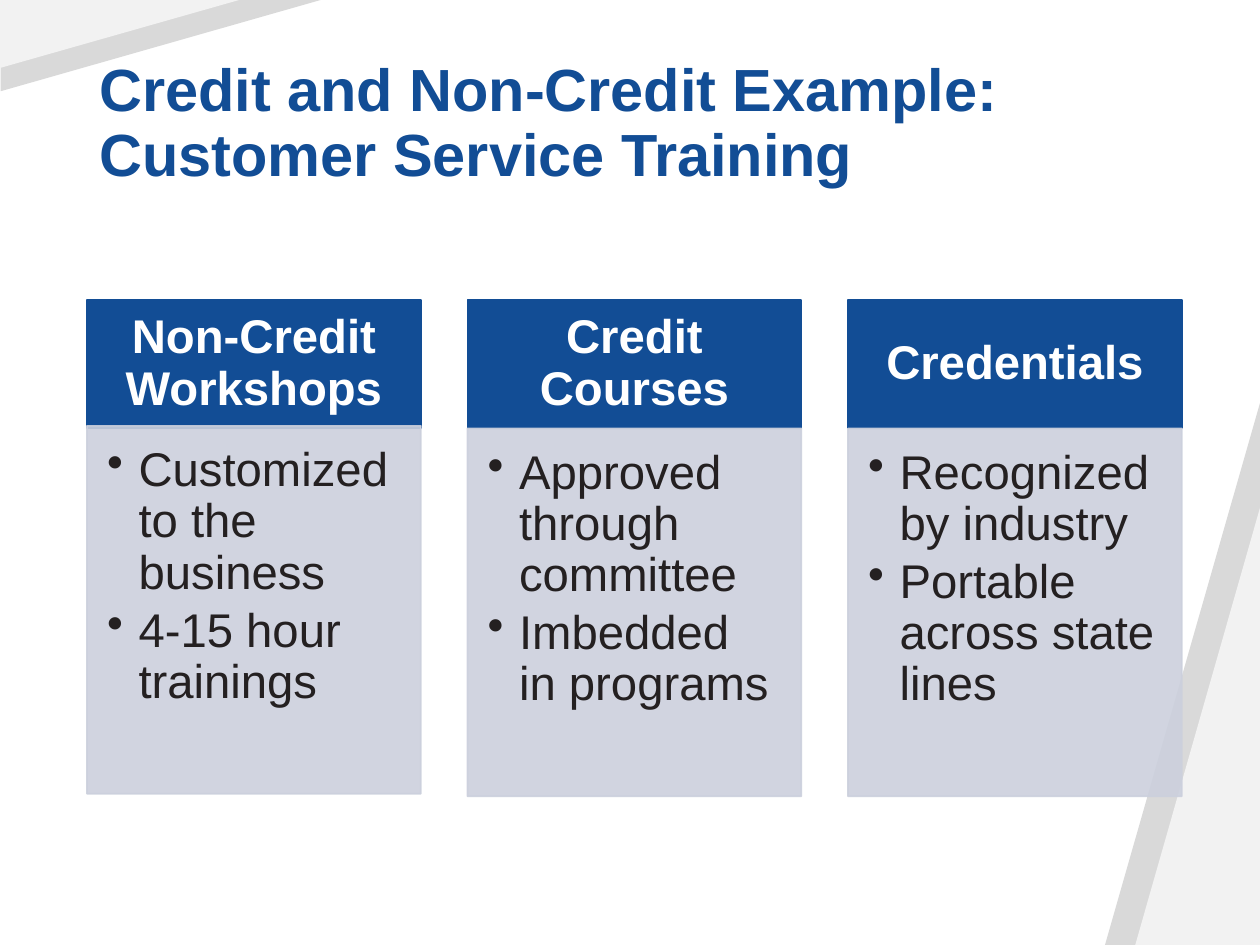
from lxml.etree import SubElement
from pptx import Presentation
from pptx.dml.color import RGBColor
from pptx.enum.shapes import MSO_SHAPE
from pptx.enum.text import MSO_ANCHOR, MSO_AUTO_SIZE, PP_ALIGN
from pptx.oxml.ns import qn
from pptx.util import Inches, Pt

TITLE = "Credit and Non-Credit Example:\vCustomer Service Training"
CARDS = [
    ("Non-Credit Workshops", 3.38, ["Customized to the business", "4-15 hour trainings"]),
    ("Credit Courses", 3.4, ["Approved through committee", "Imbedded in programs"]),
    ("Credentials", 3.4, ["Recognized by industry", "Portable across state lines"]),
]
CORNERS = [
    ((8.77, 3.2, 1.23, 4.3), "D9D9D9", False),
    ((9.01, 4.03, 0.99, 3.47), "F2F2F2", False),
    ((0.92, -0.92, 0.73, 2.56), "D9D9D9", True),
    ((0.68, -0.68, 0.54, 1.9), "F2F2F2", True),
]
LEFT, TOP, WIDTH, GAP = 0.69, 2.38, 2.65, 0.37
BLUE, PALE, WHITE, DARK = "124D95", "CCD0DD", "FFFFFF", "242021"
HEAD = dict(size=Pt(27), bold=True, name="Arial")
BODY = dict(HEAD, bold=False)


def paint(fill, color, alpha=100):
    """Give a fill a solid colour and, below 100, an opacity."""
    fill.solid()
    fill.fore_color.rgb = RGBColor.from_string(color)
    if alpha < 100:
        tone = fill._xPr.find(qn("a:solidFill"))[0]
        SubElement(tone, qn("a:alpha"), val=str(alpha * 1000))


def draw(slide, kind, box, color, alpha=100, line=True):
    """Add a flat preset shape."""
    shape = slide.shapes.add_shape(kind, *map(Inches, box))
    shape.shadow.inherit = False
    paint(shape.fill, color, alpha)
    if line:
        paint(shape.line.fill, color, alpha)
        shape.line.width = Pt(1)
    else:
        shape.line.fill.background()
    return shape


def write(shape, lines, color, style, insets, anchor, align, bullet=False):
    """Fill a shape with formatted paragraphs."""
    frame = shape.text_frame
    frame.word_wrap = True
    frame.auto_size = MSO_AUTO_SIZE.NONE
    frame.vertical_anchor = anchor
    for side, inset in zip(("left", "top", "right", "bottom"), insets):
        setattr(frame, f"margin_{side}", Inches(inset))
    frame.text = "\n".join(lines)
    for para in frame.paragraphs:
        para.alignment = align
        para.line_spacing = 0.9
        para.space_before = Pt(0)
        if bullet:
            para.space_after = Pt(4)
            props = para._p.get_or_add_pPr()
            props.set("marL", str(Inches(0.25)))
            props.set("indent", str(Inches(-0.25)))
            SubElement(props, qn("a:buChar"), char="•")
        for run in para.runs:
            for key, value in style.items():
                setattr(run.font, key, value)
            run.font.color.rgb = RGBColor.from_string(color)


def main():
    """Build and save the slide."""
    deck = Presentation()
    deck.slide_width, deck.slide_height = Inches(10), Inches(7.5)
    slide = deck.slides.add_slide(deck.slide_layouts[5])

    for box, color, turned in CORNERS:
        shape = draw(slide, MSO_SHAPE.ISOSCELES_TRIANGLE, box, color, line=False)
        shape.adjustments[0] = 1
        if turned:
            shape.rotation = 270
            shape._element.spPr.xfrm.set("flipV", "1")

    title = slide.shapes.title
    title.left, title.top, title.width, title.height = map(Inches, (LEFT, 0.4, 8.7, 1.15))
    write(title, [TITLE], BLUE, dict(HEAD, size=Pt(34)), (0.1, 0.05, 0.1, 0.05),
          MSO_ANCHOR.BOTTOM, PP_ALIGN.LEFT)

    for col, (name, top, points) in enumerate(CARDS):
        left = LEFT + col * (WIDTH + GAP)
        head = draw(slide, MSO_SHAPE.RECTANGLE, (left, TOP, WIDTH, 1.02), BLUE)
        write(head, [name], WHITE, HEAD, (0.21, 0.12, 0.21, 0.12),
              MSO_ANCHOR.MIDDLE, PP_ALIGN.CENTER)
        body = draw(slide, MSO_SHAPE.RECTANGLE, (left, top, WIDTH, 2.92), PALE, 90)
        write(body, points, DARK, BODY, (0.16, 0.16, 0.21, 0.24),
              MSO_ANCHOR.TOP, PP_ALIGN.LEFT, bullet=True)

    deck.save("out.pptx")


if __name__ == "__main__":
    main()
